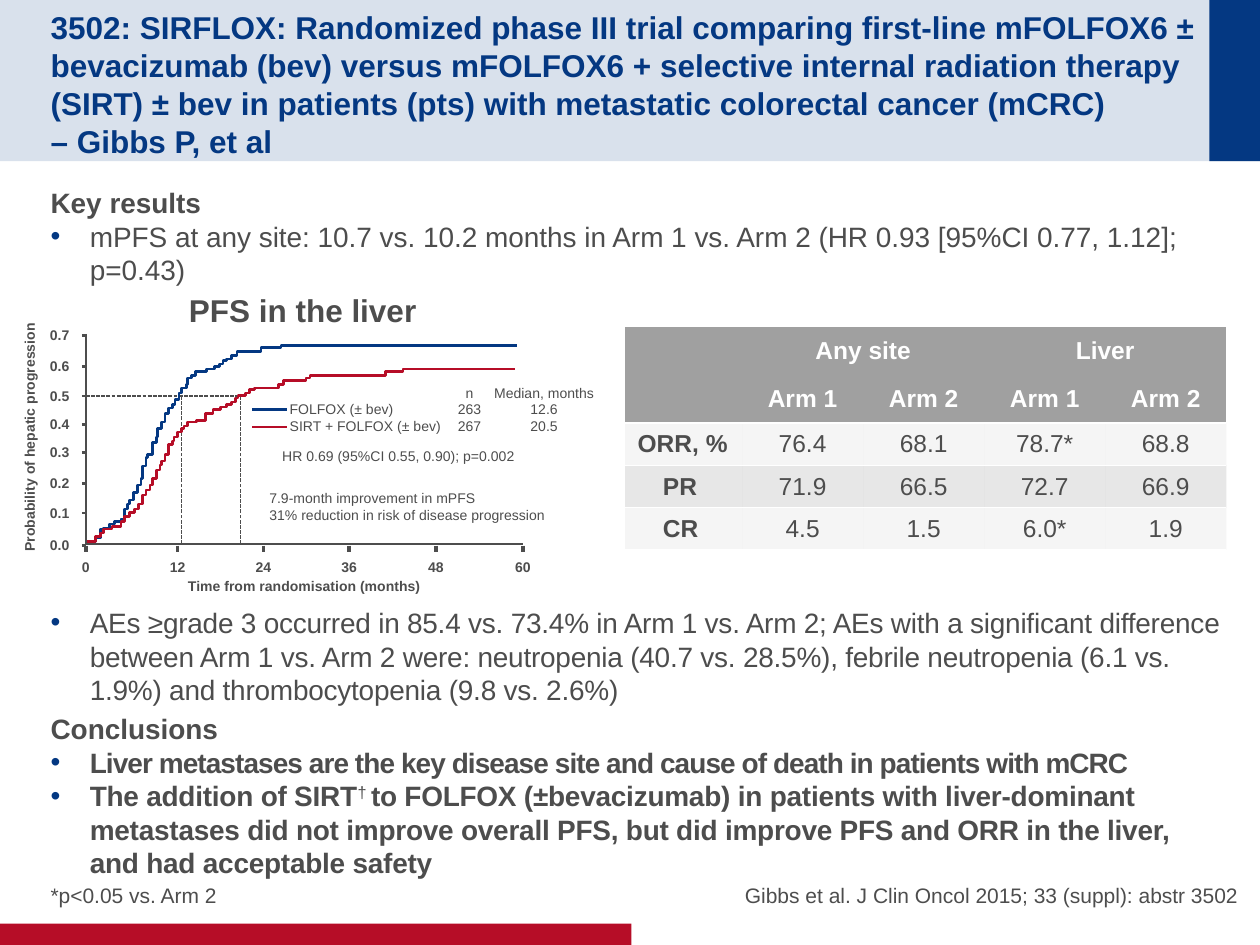
from lxml import etree
from pptx import Presentation
from pptx.dml.color import RGBColor
from pptx.enum.dml import MSO_LINE
from pptx.enum.shapes import MSO_CONNECTOR, MSO_SHAPE
from pptx.enum.text import MSO_ANCHOR, MSO_AUTO_SIZE, PP_ALIGN
from pptx.oxml.ns import qn
from pptx.util import Cm, Pt

LEFT, CENTER, RIGHT = PP_ALIGN.LEFT, PP_ALIGN.CENTER, PP_ALIGN.RIGHT
MIDDLE, TOP, BOTTOM = MSO_ANCHOR.MIDDLE, MSO_ANCHOR.TOP, MSO_ANCHOR.BOTTOM
NO_FIT, DASH = MSO_AUTO_SIZE.NONE, MSO_LINE.SQUARE_DOT
RECTANGLE, STRAIGHT = MSO_SHAPE.RECTANGLE, MSO_CONNECTOR.STRAIGHT
NAVY, RED, GREY, SILVER, WHITE = "043882", "B60D27", "4D4D4D", "A0A0A0", "FFFFFF"
NO_GRID_STYLE = "{2D5ABB26-0587-4C30-8999-92F81FD0307C}"


def paint(fill, color, opacity=100):
    fill.solid()
    fill.fore_color.rgb = RGBColor.from_string(color)
    if opacity < 100:
        rgb = fill._xPr.find(".//" + qn("a:srgbClr"))
        etree.SubElement(rgb, qn("a:alpha")).set("val", str(opacity * 1000))


def write(paragraph, text, size=16, color=GREY, bold=False, align=LEFT, before=0,
          after=0, spacing=0, baseline=0, indent=0, bullet=False):
    paragraph.alignment = align
    paragraph.space_before, paragraph.space_after = Pt(before), Pt(after)
    for number, line in enumerate(text.split("\n")):
        if number:
            paragraph.add_line_break()
        run = paragraph.add_run()
        run.text = line
        run.font.name, run.font.size, run.font.bold = "Arial", Pt(size), bold
        paint(run.font.fill, color)
        if spacing:
            run._r.get_or_add_rPr().set("spc", str(spacing))
        if baseline:
            run._r.get_or_add_rPr().set("baseline", str(baseline))
    props = paragraph._p.get_or_add_pPr()
    props.set("marL", str(Cm(0.79 if bullet else indent)))
    props.set("indent", str(Cm(-0.79 if bullet else 0)))
    for old in props.xpath("a:buClr | a:buFont | a:buChar | a:buNone"):
        props.remove(old)
    if bullet:
        bullet_color = etree.SubElement(props, qn("a:buClr"))
        etree.SubElement(bullet_color, qn("a:srgbClr")).set("val", NAVY)
        etree.SubElement(props, qn("a:buFont")).set("typeface", "Arial")
        etree.SubElement(props, qn("a:buChar")).set("char", "•")
    else:
        etree.SubElement(props, qn("a:buNone"))


prs = Presentation()
prs.slide_width, prs.slide_height = Cm(25.4), Cm(19.05)
slide = prs.slides.add_slide(prs.slide_layouts[3])
shapes = slide.shapes

# Colour bands behind everything
for left, top, width, height, color, opacity in [
    (0, 0, 25.4, 3.25, NAVY, 15),
    (24.38, 0, 1.02, 3.25, NAVY, 100),
    (0, 18.62, 12.73, 0.43, RED, 100),
]:
    band = shapes.add_shape(RECTANGLE, Cm(left), Cm(top), Cm(width), Cm(height))
    band.shadow.inherit = False
    band.line.fill.background()
    paint(band.fill, color, opacity)
    shapes._spTree.remove(band._element)
    shapes._spTree.insert(len(shapes._spTree) - len(shapes), band._element)

# Title, findings and citation placeholders
title, findings, citation = shapes.title, slide.placeholders[1], slide.placeholders[2]
for holder, box, margins, anchor in [
    (title, (1.02, 0.51, 23.14, 2.24), (0, 0.13, 0, 0), MIDDLE),
    (findings, (1.02, 3.61, 23.95, 14.38), (0, 0.13, 0.25, 0.13), TOP),
    (citation, (12.9, 16.94, 12.07, 1.35), (0, 0, 0, 0), BOTTOM),
]:
    holder.left, holder.top, holder.width, holder.height = map(Cm, box)
    frame = holder.text_frame
    frame.margin_left, frame.margin_top, frame.margin_right, frame.margin_bottom = map(Cm, margins)
    frame.vertical_anchor, frame.auto_size, frame.word_wrap = anchor, NO_FIT, True

write(title.text_frame.paragraphs[0],
      "3502: SIRFLOX: Randomized phase III trial comparing first-line mFOLFOX6 ± bevacizumab "
      "(bev) versus mFOLFOX6 + selective internal radiation therapy (SIRT) ± bev in patients "
      "(pts) with metastatic colorectal cancer (mCRC)\n– Gibbs P, et al",
      size=18, color=NAVY, bold=True)
write(citation.text_frame.paragraphs[0],
      "Gibbs et al. J Clin Oncol 2015; 33 (suppl): abstr 3502", size=12, align=RIGHT, after=4)

# The space before the second bullet leaves room for the plot and the table
for number, (text, style) in enumerate([
    ("Key results", dict(bold=True)),
    ("mPFS at any site: 10.7 vs. 10.2 months in Arm 1 vs. Arm 2 (HR 0.93 [95%CI 0.77, 1.12]; "
     "p=0.43)", dict(bullet=True)),
    ("AEs ≥grade 3 occurred in 85.4 vs. 73.4% in Arm 1 vs. Arm 2; AEs with a significant "
     "difference between Arm 1 vs. Arm 2 were: neutropenia (40.7 vs. 28.5%), febrile neutropenia "
     "(6.1 vs. 1.9%) and thrombocytopenia (9.8 vs. 2.6%)",
     dict(bullet=True, before=182.5, spacing=-10)),
    ("Conclusions", dict(bold=True, before=3)),
    ("Liver metastases are the key disease site and cause of death in patients with mCRC",
     dict(bullet=True, bold=True, spacing=-50)),
    ("The addition of SIRT", dict(bullet=True, bold=True, spacing=-10)),
]):
    frame = findings.text_frame
    finding = frame.add_paragraph() if number else frame.paragraphs[0]
    write(finding, text, **style)
write(finding, "† ", baseline=30000, bullet=True)
write(finding, "to FOLFOX (±bevacizumab) in patients with liver-dominant metastases did not improve "
      "overall PFS, but did improve PFS and ORR in the liver, and had acceptable safety",
      bold=True, spacing=-10, bullet=True)

# Response table
responses = [
    ["", "Any site", "", "Liver", ""],
    ["", "Arm 1", "Arm 2", "Arm 1", "Arm 2"],
    ["ORR, %", "76.4", "68.1", "78.7*", "68.8"],
    ["PR", "71.9", "66.5", "72.7", "66.9"],
    ["CR", "4.5", "1.5", "6.0*", "1.9"],
]
table_frame = shapes.add_table(5, 5, Cm(12.6), Cm(6.6), Cm(12.12), Cm(4.25))
table = table_frame.table
table.first_row = table.horz_banding = False
table._tbl.tblPr.find(qn("a:tableStyleId")).text = NO_GRID_STYLE
for number, column in enumerate(table.columns):
    column.width = Cm(2.44 if number else 2.36)
for r, values in enumerate(responses):
    table.rows[r].height = Cm(0.85)
    for c, value in enumerate(values):
        cell = table.cell(r, c)
        cell.vertical_anchor = MIDDLE
        paint(cell.fill, SILVER, (100, 100, 10, 25, 10)[r])
        write(cell.text_frame.paragraphs[0], value, size=14, color=GREY if r > 1 else WHITE,
              bold=r < 2 or c == 0, align=CENTER if c else LEFT,
              indent=0.51 if c == 0 and r > 2 else 0)
        edges = [[], ["a:lnB"], ["a:lnT", "a:lnB"]][min(r, 2)]
        for position, edge in enumerate(edges):
            border = etree.Element(qn(edge), w=str(Pt(1)))
            border_fill = etree.SubElement(border, qn("a:solidFill"))
            etree.SubElement(border_fill, qn("a:srgbClr")).set("val", WHITE)
            cell._tc.get_or_add_tcPr().insert(position, border)
for c in (1, 3):
    table.cell(0, c).merge(table.cell(0, c + 1))

# Plot labels and footnote: text, box, format, rotation
probability_ticks = [6.76, 7.39, 7.98, 8.56, 9.12, 9.75, 10.34, 11]
month_ticks = [1.73, 3.58, 5.31, 7.04, 8.79, 10.54]
axis_style = dict(size=8, bold=True, align=CENTER)
labels = [
    ("PFS in the liver", (3.56, 5.74, 5.16, 1.02), dict(size=18, bold=True), 0),
    ("*p<0.05 vs. Arm 2", (1.02, 16.94, 12.47, 1.35), dict(size=12, after=4), 0),
    ("Probability of hepatic progression", (-1.98, 8.51, 5.16, 0.61), axis_style, 270),
    ("Time from randomisation (months)", (3.53, 11.51, 5.21, 0.61), axis_style, 0),
    ("FOLFOX (± bev)\nSIRT + FOLFOX (± bev)", (5.59, 7.95, 3.61, 0.94), dict(size=8), 0),
    ("n\n263\n267", (8.97, 7.62, 0.99, 1.27), dict(size=8, align=CENTER), 0),
    ("Median, months\n12.6\n20.5", (9.7, 7.62, 2.54, 1.27), dict(size=8, align=CENTER), 0),
    ("HR 0.69 (95%CI 0.55, 0.90); p=0.002", (5.44, 8.89, 5.26, 0.61), dict(size=8), 0),
    ("7.9-month improvement in mPFS\n31% reduction in risk of disease progression",
     (5.18, 9.75, 6.15, 0.94), dict(size=8), 0),
]
labels += [(f"{0.7 - i / 10:.1f}", (0.74, y - 0.3, 0.91, 0.61), dict(size=8, bold=True, align=RIGHT), 0)
           for i, y in enumerate(probability_ticks)]
labels += [(str(12 * i), (x - 0.42, 11.13, 0.84, 0.61), axis_style, 0)
           for i, x in enumerate(month_ticks)]
for text, box, style, rotation in labels:
    label = shapes.add_textbox(*map(Cm, box))
    label.rotation = rotation
    frame = label.text_frame
    frame.word_wrap = False
    if text.startswith("*"):
        frame.margin_left = frame.margin_top = frame.margin_right = frame.margin_bottom = 0
        frame.vertical_anchor, frame.word_wrap = BOTTOM, True
    for number, line in enumerate(text.split("\n")):
        write(frame.add_paragraph() if number else frame.paragraphs[0], line, **style)

# Ticks, median guides and legend keys: ends, colour, width, dash
rules = [(1.65, y, 1.73, y, GREY, 1.5, None) for y in probability_ticks]
rules += [(x, 11, x, 11.13, GREY, 2, None) for x in month_ticks]
rules += [(1.73, 7.98, 4.9, 7.98, GREY, 0.75, DASH)]
rules += [(x, 10.97, x, 7.98, GREY, 0.75, DASH) for x in (4.85, 3.66)]
rules += [(5.08, 8.26, 5.79, 8.26, NAVY, 1.5, None), (5.08, 8.61, 5.79, 8.61, RED, 1.5, None)]
for x1, y1, x2, y2, color, width, dash in rules:
    rule = shapes.add_connector(STRAIGHT, Cm(x1), Cm(y1), Cm(x2), Cm(y2))
    paint(rule.line.fill, color)
    rule.line.width, rule.line.dash_style = Pt(width), dash
    etree.SubElement(rule._element.spPr, qn("a:effectLst"))

# Axes and step curves on a fine grid; each step is (x of the rise, new y)
folfox_steps = [
    (76, 427), (80, 420), (82, 419), (87, 416), (91, 414), (96, 412), (99, 404), (101, 400),
    (103, 397), (106, 391), (109, 385), (112, 380), (113, 370), (116, 363), (117, 361), (121, 351),
    (124, 347), (125, 340), (128, 335), (131, 328), (134, 324), (137, 321), (139, 317), (142, 312),
    (144, 308), (148, 305), (149, 300), (152, 298), (155, 295), (164, 293), (170, 291), (174, 289),
    (177, 286), (180, 285), (184, 282), (188, 279), (207, 276), (223, 274), (410, 274)]
sirt_steps = [
    (76, 426), (80, 423), (82, 420), (89, 418), (96, 414), (99, 410), (103, 407), (107, 404),
    (110, 400), (113, 393), (116, 389), (119, 385), (121, 380), (124, 373), (127, 369), (128, 366),
    (131, 361), (134, 353), (137, 350), (138, 347), (141, 343), (144, 340), (146, 338), (149, 335),
    (156, 334), (163, 328), (169, 325), (175, 323), (180, 321), (184, 319), (187, 316), (189, 314),
    (195, 312), (198, 309), (202, 308), (221, 305), (225, 302), (243, 300), (246, 298), (306, 295),
    (320, 293), (409, 293)]
outlines = [([(68, 265), (68, 432), (415, 432)], GREY, 1.25)]
for steps, color in [(folfox_steps, NAVY), (sirt_steps, RED)]:
    points = [(69, 430)]
    for x, y in steps:
        points += [(x, points[-1][1]), (x, y)]
    outlines.append((points, color, 1.5))
for points, color, width in outlines:
    builder = shapes.build_freeform(*points[0], scale=Cm(0.0254))
    builder.add_line_segments(points[1:], close=False)
    outline = builder.convert_to_shape()
    outline.shadow.inherit = False
    outline.fill.background()
    paint(outline.line.fill, color)
    outline.line.width = Pt(width)

prs.save("out.pptx")
